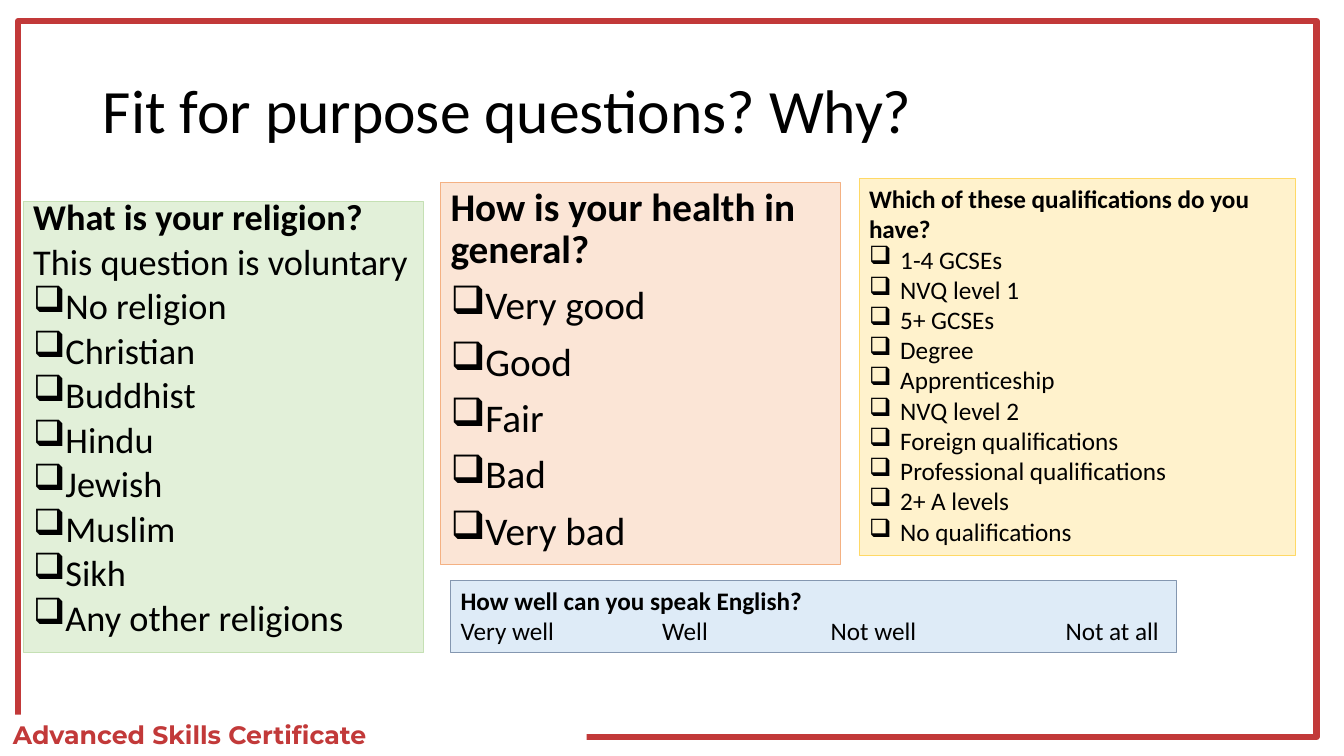
from dataclasses import dataclass

import pptx
import pptx.dml.color
import pptx.enum.shapes
import pptx.enum.text
import pptx.oxml
import pptx.oxml.ns
import pptx.util
from lxml import etree


@dataclass(frozen=True)
class Theme:
    body_font: str = "Calibri"
    brand_font: str = "Montserrat"
    brand: str = "C23939"
    ink: str = "000000"
    paper: str = "FFFFFF"
    green: tuple = ("E2F0D9", "C5E0B4")
    orange: tuple = ("FBE5D6", "F4B183")
    yellow: tuple = ("FFF2CC", "FFD966")
    blue: tuple = ("DEEBF7", "8497B0")
    title_size: float = 44
    large: float = 28
    medium: float = 25.9
    small: float = 18
    thin: float = 0.75
    thick: float = 4.5


def rgb(value):
    return pptx.dml.color.RGBColor.from_string(value)


def write(frame, text, *, size, font, color, bold=False, first=False,
          spacing=None, before=0, bullet_indent=0, tabs=()):
    paragraph = frame.paragraphs[0] if first else frame.add_paragraph()
    paragraph.alignment = pptx.enum.text.PP_ALIGN.LEFT
    properties = paragraph._p.get_or_add_pPr()
    if bullet_indent:
        indent = pptx.util.Inches(bullet_indent)
        properties.set("marL", str(indent))
        properties.set("indent", str(-indent))
        bullet = etree.SubElement(properties, pptx.oxml.ns.qn("a:buChar"))
        bullet.set("char", "❑")
    if tabs:
        stops = etree.SubElement(properties, pptx.oxml.ns.qn("a:tabLst"))
        for position in tabs:
            stop = etree.SubElement(stops, pptx.oxml.ns.qn("a:tab"))
            stop.set("pos", str(pptx.util.Inches(position)))
            stop.set("algn", "l")
    if spacing:
        paragraph.line_spacing = spacing
    paragraph.space_before = pptx.util.Pt(0 if first else before)
    run = paragraph.add_run()
    run.text = text
    run.font.size = pptx.util.Pt(size)
    run.font.name = font
    run.font.bold = bold
    run.font.color.rgb = rgb(color)


class SurveySlide:
    def __init__(self, deck, theme):
        self.deck = deck
        self.theme = theme
        self.slide = deck.slides.add_slide(deck.slide_layouts[5])

    def area(self, left, top, width, height):
        across, down = self.deck.slide_width / 100, self.deck.slide_height / 100
        return (round(left * across), round(top * down),
                round(width * across), round(height * down))

    def title(self, text, percent):
        heading = self.slide.shapes.title
        heading.left, heading.top, heading.width, heading.height = self.area(*percent)
        heading.text_frame.vertical_anchor = pptx.enum.text.MSO_ANCHOR.MIDDLE
        write(heading.text_frame, text, size=self.theme.title_size,
              font=self.theme.body_font, color=self.theme.ink, first=True, spacing=0.9)

    def panel(self, percent, fill=None, line=None, weight=0):
        panel = self.slide.shapes.add_shape(
            pptx.enum.shapes.MSO_SHAPE.RECTANGLE, *self.area(*percent))
        panel.shadow.inherit = False
        if fill:
            panel.fill.solid()
            panel.fill.fore_color.rgb = rgb(fill)
        else:
            panel.fill.background()
        if line:
            panel.line.color.rgb = rgb(line)
            panel.line.width = pptx.util.Pt(weight)
        else:
            panel.line.fill.background()
        panel.text_frame.word_wrap = True
        panel.text_frame.vertical_anchor = pptx.enum.text.MSO_ANCHOR.TOP
        return panel.text_frame

    def banner(self, text, percent):
        write(self.panel(percent, self.theme.paper), text, size=self.theme.small,
              font=self.theme.brand_font, color=self.theme.brand, bold=True, first=True)

    def question(self, prompt, percent, colors, size, *, note=None, options=(),
                 scale=(), tabs=(), indent=0.25, spacing=None, before=0):
        frame = self.panel(percent, *colors, self.theme.thin)
        style = dict(size=size, font=self.theme.body_font, color=self.theme.ink,
                     spacing=spacing, before=before)
        write(frame, prompt, bold=True, first=True, **style)
        if note:
            write(frame, note, **style)
        for option in options:
            write(frame, option, bullet_indent=indent, **style)
        if scale:
            write(frame, "\t".join(scale), tabs=tabs, **style)


def main():
    deck = pptx.Presentation()
    deck.slide_width = pptx.util.Inches(13.33)
    deck.slide_height = pptx.util.Inches(7.5)
    theme = Theme()
    survey = SurveySlide(deck, theme)

    survey.panel((1.35, 2.8, 96.62, 94.67), line=theme.brand, weight=theme.thick)
    survey.banner("Advanced Skills Certificate", (0.22, 94.53, 43.44, 5.33))
    survey.title("Fit for purpose questions? Why?", (6.9, 5.33, 86.27, 19.33))

    survey.question(
        "What is your religion?", (1.73, 26.67, 29.78, 59.6), theme.green, theme.medium,
        note="This question is voluntary",
        options=("No religion", "Christian", "Buddhist", "Hindu", "Jewish",
                 "Muslim", "Sikh", "Any other religions"),
        spacing=0.7, before=10)
    survey.question(
        "How is your health in general?", (32.78, 24.13, 29.78, 50.53),
        theme.orange, theme.large,
        options=("Very good", "Good", "Fair", "Bad", "Very bad"),
        spacing=0.9, before=10)
    survey.question(
        "How well can you speak English?", (33.53, 76.8, 54.01, 9.47),
        theme.blue, theme.small,
        scale=("Very well", "Well", "Not well", "Not at all"), tabs=(2, 3.67, 6))
    survey.question(
        "Which of these qualifications do you have?", (63.92, 23.6, 32.48, 49.87),
        theme.yellow, theme.small,
        options=("1-4 GCSEs", "NVQ level 1", "5+ GCSEs", "Degree", "Apprenticeship",
                 "NVQ level 2", "Foreign qualifications",
                 "Professional qualifications", "2+ A levels", "No qualifications"),
        indent=0.31)

    deck.save("out.pptx")


if __name__ == "__main__":
    main()
